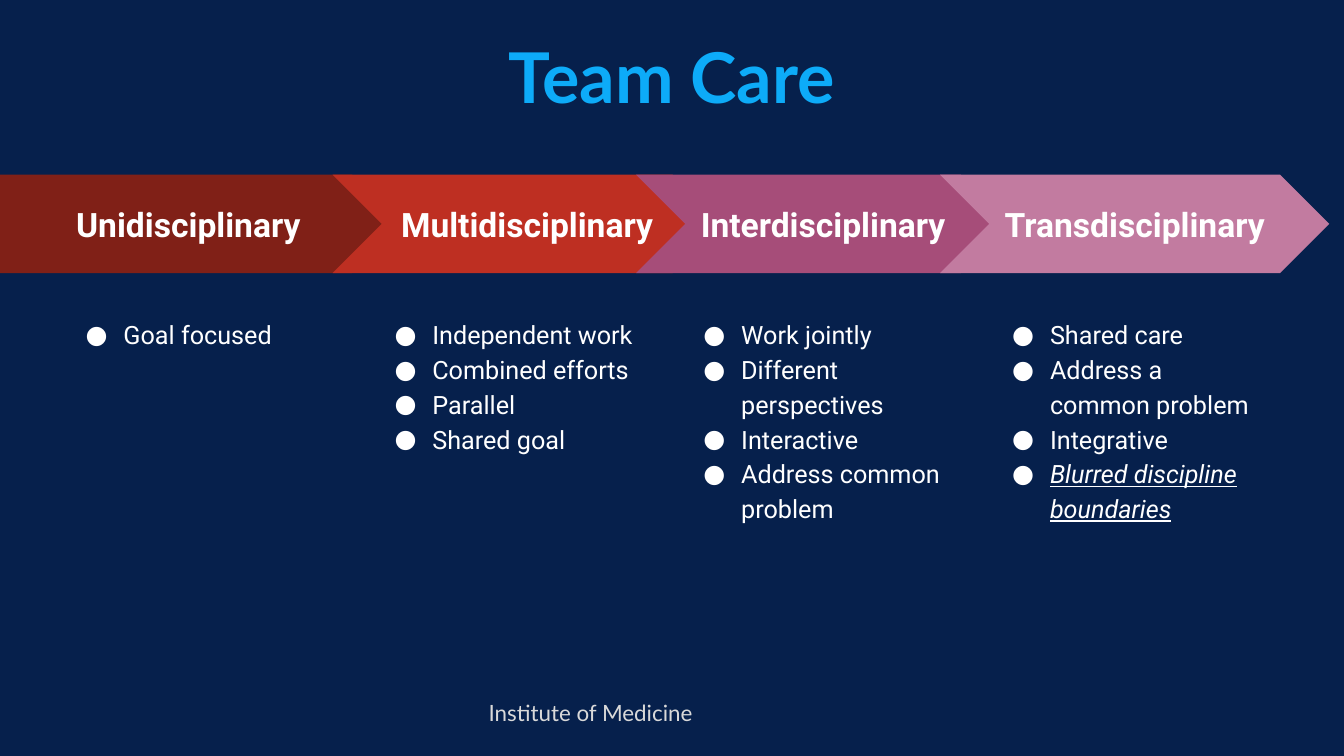
from dataclasses import dataclass

from lxml import etree
from pptx import Presentation
from pptx.dml import color
from pptx.enum import shapes, text
from pptx.oxml import ns
from pptx.util import Pt


@dataclass(frozen=True)
class Theme:
    background: str = "06204C"
    heading: str = "0DABF8"
    light: str = "FFFFFF"
    muted: str = "D9D9D9"
    heading_font: str = "Lato"
    body_font: str = "Roboto"
    heading_size: float = 50
    stage_size: float = 24
    trait_size: float = 18
    source_size: float = 16


@dataclass(frozen=True)
class Style:
    font: str
    size: float
    color: str
    bold: bool = False


@dataclass(frozen=True)
class Box:
    left: float
    top: float
    width: float
    height: float

    def lengths(self) -> tuple:
        return Pt(self.left), Pt(self.top), Pt(self.width), Pt(self.height)


@dataclass(frozen=True)
class Stage:
    name: str
    fill: str
    arrow: Box
    traits: tuple[str, ...]
    outline: shapes.MSO_SHAPE = shapes.MSO_SHAPE.CHEVRON
    emphasis: str = ""


THEME = Theme()
HEADING = Style(THEME.heading_font, THEME.heading_size, THEME.heading, True)
SOURCE = Style(THEME.heading_font, THEME.source_size, THEME.muted)
STAGE_NAME = Style(THEME.body_font, THEME.stage_size, THEME.light, True)
TRAIT = Style(THEME.body_font, THEME.trait_size, THEME.light)

ARROW_TOP, ARROW_HEIGHT = 124.8, 70.2
TRAITS_LEFT, TRAITS_STEP = 43.2, 220.6
INSET = 9
BULLET_INDENT, BULLET_HANG = 36, 27

STAGES = (
    Stage("Unidisciplinary", "802017", Box(0, ARROW_TOP, 286.6, ARROW_HEIGHT),
          ("Goal focused",), outline=shapes.MSO_SHAPE.PENTAGON),
    Stage("Multidisciplinary", "BE2F22", Box(237.6, ARROW_TOP, 277.9, ARROW_HEIGHT),
          ("Independent work", "Combined efforts", "Parallel", "Shared goal")),
    Stage("Interdisciplinary", "A64D79", Box(454.4, ARROW_TOP, 267.1, ARROW_HEIGHT),
          ("Work jointly", "Different perspectives", "Interactive",
           "Address common problem")),
    Stage("Transdisciplinary", "C27BA0", Box(671.6, ARROW_TOP, 277.9, ARROW_HEIGHT),
          ("Shared care", "Address a common problem", "Integrative",
           "Blurred discipline boundaries"),
          emphasis="Blurred discipline boundaries"),
)


def rgb(value: str) -> color.RGBColor:
    return color.RGBColor.from_string(value)


def prepare_frame(frame, anchor, inset_x: float, inset_y: float) -> None:
    frame.word_wrap = True
    frame.vertical_anchor = anchor
    frame.margin_left = frame.margin_right = Pt(inset_x)
    frame.margin_top = frame.margin_bottom = Pt(inset_y)


def add_run(paragraph, words: str, style: Style, emphasized: bool = False) -> None:
    run = paragraph.add_run()
    run.text = words
    run.font.name = style.font
    run.font.size = Pt(style.size)
    run.font.color.rgb = rgb(style.color)
    run.font.bold = style.bold
    if emphasized:
        run.font.italic = run.font.underline = True


def add_bullet(paragraph) -> None:
    properties = paragraph._p.get_or_add_pPr()
    properties.set("marL", str(Pt(BULLET_INDENT)))
    properties.set("indent", str(-Pt(BULLET_HANG)))
    bullet_color = etree.SubElement(properties, ns.qn("a:buClr"))
    etree.SubElement(bullet_color, ns.qn("a:srgbClr"), val=THEME.light)
    etree.SubElement(properties, ns.qn("a:buFont"), typeface=THEME.body_font)
    etree.SubElement(properties, ns.qn("a:buChar"), char="●")


def add_line(slide, box: Box, words: str, style: Style, align,
             inset_x: float, inset_y: float) -> None:
    frame = slide.shapes.add_textbox(*box.lengths()).text_frame
    prepare_frame(frame, text.MSO_ANCHOR.MIDDLE, inset_x, inset_y)
    frame.paragraphs[0].alignment = align
    add_run(frame.paragraphs[0], words, style)


def add_arrow(slide, stage: Stage) -> None:
    arrow = slide.shapes.add_shape(stage.outline, *stage.arrow.lengths())
    arrow.adjustments[0] = 0.5
    arrow.shadow.inherit = False
    arrow.fill.solid()
    arrow.fill.fore_color.rgb = rgb(stage.fill)
    arrow.line.fill.background()
    prepare_frame(arrow.text_frame, text.MSO_ANCHOR.MIDDLE, INSET, INSET)
    label = arrow.text_frame.paragraphs[0]
    label.alignment = text.PP_ALIGN.CENTER
    add_run(label, stage.name, STAGE_NAME)


def add_traits(slide, stage: Stage, column: int) -> None:
    box = Box(TRAITS_LEFT + column * TRAITS_STEP, 216, 200.2, 274.3)
    frame = slide.shapes.add_textbox(*box.lengths()).text_frame
    prepare_frame(frame, text.MSO_ANCHOR.TOP, INSET, INSET)
    for index, trait in enumerate(stage.traits):
        paragraph = frame.add_paragraph() if index else frame.paragraphs[0]
        add_bullet(paragraph)
        paragraph.line_spacing = 1.15
        add_run(paragraph, trait, TRAIT, trait == stage.emphasis)


def main() -> None:
    deck = Presentation()
    deck.slide_width, deck.slide_height = Pt(960), Pt(540)
    slide = deck.slides.add_slide(deck.slide_layouts[6])
    slide.background.fill.solid()
    slide.background.fill.fore_color.rgb = rgb(THEME.background)

    # Heading and source
    add_line(slide, Box(48, 18, 864, 72), "Team Care", HEADING,
             text.PP_ALIGN.CENTER, 0, 0.7)
    add_line(slide, Box(342, 486, 570, 46), "Institute of Medicine", SOURCE,
             text.PP_ALIGN.LEFT, 7.2, 3.6)

    # Stages of team care, each with its traits below
    for column, stage in enumerate(STAGES):
        add_arrow(slide, stage)
        add_traits(slide, stage, column)

    deck.save("out.pptx")


if __name__ == "__main__":
    main()
